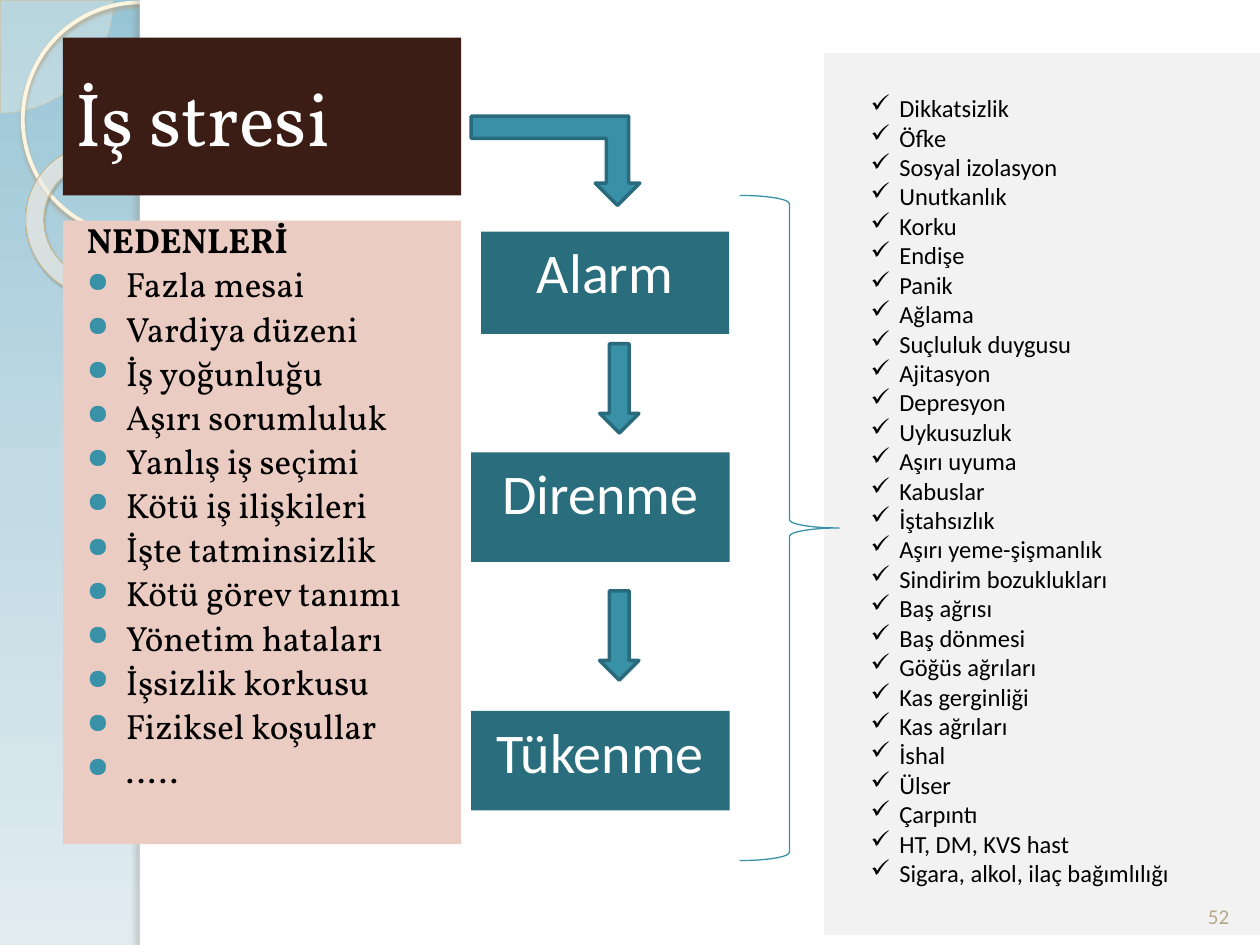
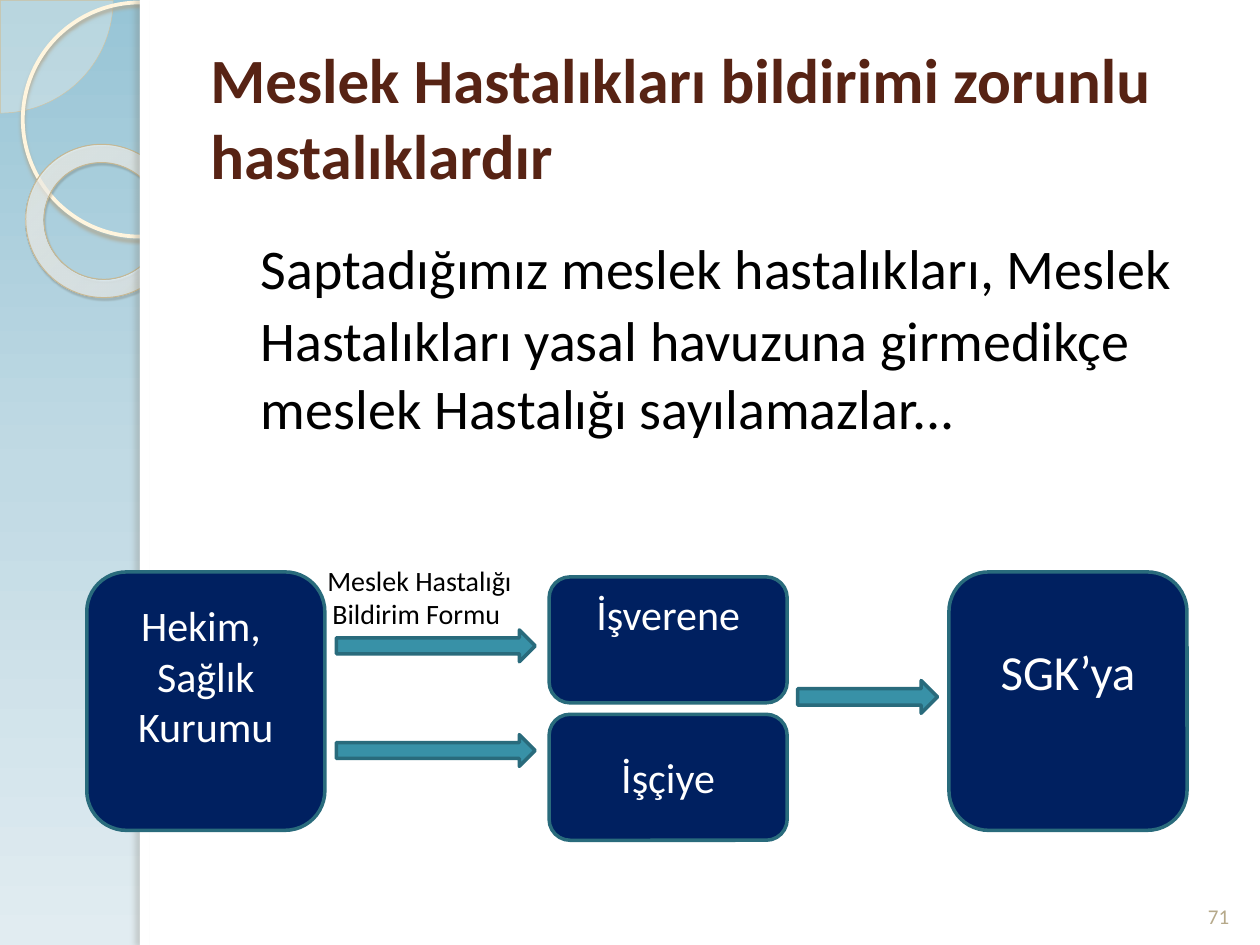
from lxml.etree import SubElement
from pptx import Presentation
from pptx.dml.color import RGBColor
from pptx.enum.shapes import MSO_SHAPE
from pptx.enum.text import MSO_ANCHOR, PP_ALIGN
from pptx.oxml import parse_xml
from pptx.oxml.ns import nsdecls, qn
from pptx.util import Cm, Pt

THEME = {
    "white": "FFFFFF", "black": "000000", "teal": "3891A7", "teal_line": "296B7C",
    "stage": "2A6D7D", "navy": "002060", "brown": "3B1D15", "rust": "572314",
    "rose": "EACCC3", "grey": "F2F2F2", "number": "B6A98A",
    "pie": "FEFAF4", "pie_line": "D3C39F", "ring_line": "FFF5DE", "donut_line": "C7B893",
    "sky": [(0, "98C5D6", 100), (50, "C1DAE4", 100), (100, "E1ECF1", 100)],
    "glow": [(0, "FFFCF6", 70), (70, "FFFEFB", 55), (100, "F0D28E", 60)],
    "sans": "Calibri", "serif": "Vollkorn",
    "cover": 43, "title": 36, "lead": 32, "tab": 48, "box": 24, "goal": 28,
    "causes": 20, "form": 16, "signs": 14, "small": 12,
}


def draw(page, kind, place, fill=None, line=None, width=2, shadow=None, gradient=None):
    shape = page.shapes.add_shape(kind, *[Cm(length) for length in place])
    shape.shadow.inherit = False
    props = shape._element.spPr
    if fill:
        shape.fill.solid()
        shape.fill.fore_color.rgb = RGBColor.from_string(THEME[fill])
    else:
        shape.fill.background()
    if line:
        shape.line.color.rgb = RGBColor.from_string(THEME[line])
        shape.line.width = Pt(width)
    else:
        shape.line.fill.background()
    if gradient is not None:
        props.replace(props.find(qn("a:noFill")), gradient)
    if shadow:
        color, alpha, blur, distance, angle = shadow
        outer = SubElement(props.find(qn("a:effectLst")), qn("a:outerShdw"), blurRad=str(Pt(blur)),
                           dist=str(Pt(distance)), dir=str(angle * 60000), rotWithShape="0")
        tone = SubElement(outer, qn("a:srgbClr"), val=color)
        SubElement(tone, qn("a:alpha"), val=str(alpha * 1000))
    return shape


def write(shape, lines, size, color, face="sans", bold=False, frame=None, para_format=None,
          left=0, first=0, bullet=None, bullet_color=None, bullet_size=100):
    text = shape.text_frame
    frame_format = {"word_wrap": True, "vertical_anchor": MSO_ANCHOR.TOP} | (frame or {})
    for name, value in frame_format.items():
        setattr(text, name, value)
    for line in lines:
        para = text.add_paragraph() if text.paragraphs[0].runs else text.paragraphs[0]
        for name, value in ({"alignment": PP_ALIGN.LEFT} | (para_format or {})).items():
            setattr(para, name, value)
        props = para._p.get_or_add_pPr()
        props.set("marL", str(Cm(left)))
        props.set("indent", str(Cm(first)))
        if bullet:
            tone = SubElement(props, qn("a:buClr"))
            SubElement(tone, qn("a:srgbClr"), val=THEME[bullet_color])
            SubElement(props, qn("a:buSzPct"), val=str(bullet_size * 1000))
            SubElement(props, qn("a:buChar"), char=bullet)
        for words, points in (line if isinstance(line, list) else [(line, size)]):
            span = para.add_run()
            span.text = words
            for name, value in {"name": THEME[face], "size": Pt(THEME[points]), "bold": bold}.items():
                setattr(span.font, name, value)
            span.font.color.rgb = RGBColor.from_string(THEME[color])


deck = Presentation()
deck.slide_width, deck.slide_height = Cm(25.4), Cm(19.05)
stress, report = pages = [deck.slides.add_slide(deck.slide_layouts[6]) for _ in range(2)]
CENTER = {"alignment": PP_ALIGN.CENTER}
MIDDLE = {"vertical_anchor": MSO_ANCHOR.MIDDLE}

for page in pages:
    gradients = []
    for stops, direction in (
        ("sky", '<a:lin ang="5400000" scaled="0"/>'),
        ("glow", '<a:path path="circle"><a:fillToRect l="-408000" t="-50000" r="508000" b="150000"/></a:path>'),
    ):
        marks = "".join(
            f'<a:gs pos="{at * 1000}"><a:srgbClr val="{color}"><a:alpha val="{alpha * 1000}"/></a:srgbClr></a:gs>'
            for at, color, alpha in THEME[stops])
        gradients.append(parse_xml(f'<a:gradFill {nsdecls("a")}><a:gsLst>{marks}</a:gsLst>{direction}</a:gradFill>'))
    sky, glow = gradients
    page.background.fill.gradient()
    old_sky = page._element.find(".//" + qn("a:gradFill"))
    old_sky.getparent().replace(old_sky, sky)

    pie = draw(page, MSO_SHAPE.PIE, (-2.26, -2.26, 4.54, 4.54), "pie", "pie_line", 0.25)
    pie.adjustments[0], pie.adjustments[1] = 0, 54
    SubElement(pie._element.spPr.find(".//" + qn("a:srgbClr")), qn("a:alpha"), val="33000")
    draw(page, MSO_SHAPE.OVAL, (0.46, 0.05, 4.72, 4.72), None, "ring_line", 2.15, ("B0A68F", 85, 2, 2, 90))
    donut = draw(page, MSO_SHAPE.DONUT, (0.51, 2.92, 3.12, 3.07), None, "donut_line", 0.58,
                 ("5A5444", 35, 1, 1.2, 75), glow)
    donut.rotation = 38.6
    donut.adjustments[0] = 0.12
    draw(page, MSO_SHAPE.RECTANGLE, (2.82, 0, 22.58, 19.05), "white")
    draw(page, MSO_SHAPE.RECTANGLE, (2.82, 0, 0.2, 19.05), "white", shadow=("736F63", 25, 3, 3, 180))

title = draw(stress, MSO_SHAPE.RECTANGLE, (1.27, 0.76, 8.03, 3.18), "brown")
write(title, ["İş stresi"], "cover", "white", "serif", frame=MIDDLE)

causes = draw(stress, MSO_SHAPE.RECTANGLE, (1.27, 4.45, 8.03, 12.57), "rose")
cause_format = {"face": "serif", "left": 1.02, "first": -0.79,
                "para_format": {"line_spacing": 0.8, "space_before": Pt(6)}}
write(causes, ["NEDENLERİ"], "causes", "black", bold=True, **cause_format)
write(causes, [
    "Fazla mesai", "Vardiya düzeni", "İş yoğunluğu", "Aşırı sorumluluk", "Yanlış iş seçimi",
    "Kötü iş ilişkileri", "İşte tatminsizlik", "Kötü görev tanımı", "Yönetim hataları",
    "İşsizlik korkusu", "Fiziksel koşullar", "…..",
], "causes", "black", bullet="●", bullet_color="teal", bullet_size=80, **cause_format)

signs = draw(stress, MSO_SHAPE.RECTANGLE, (16.61, 1.07, 8.79, 17.78), "grey")
write(signs, [
    "Dikkatsizlik", "Öfke", "Sosyal izolasyon", "Unutkanlık", "Korku", "Endişe", "Panik", "Ağlama",
    "Suçluluk duygusu", "Ajitasyon", "Depresyon", "Uykusuzluk", "Aşırı uyuma", "Kabuslar",
    "İştahsızlık", "Aşırı yeme-şişmanlık", "Sindirim bozuklukları", "Baş ağrısı", "Baş dönmesi",
    "Göğüs ağrıları", "Kas gerginliği", "Kas ağrıları", "İshal", "Ülser", "Çarpıntı",
    "HT, DM, KVS hast", "Sigara, alkol, ilaç bağımlılığı",
], "signs", "black", frame={"margin_top": Cm(0.81)}, left=1.27, first=-0.58,
    bullet="✓", bullet_color="black")

for name, place in (
    ("Alarm", (9.7, 4.67, 5, 2.06)),
    ("Direnme", (9.5, 9.12, 5.21, 2.21)),
    ("Tükenme", (9.5, 14.33, 5.21, 2.01)),
):
    stage = draw(stress, MSO_SHAPE.RECTANGLE, place, "stage")
    write(stage, [name], "lead", "white", para_format=CENTER | {"space_before": Pt(2)})

bent = draw(stress, MSO_SHAPE.BENT_UP_ARROW, (9.5, 2.34, 3.4, 1.8), "teal", "teal_line")
bent.rotation = 180
bent._element.spPr.xfrm.set("flipH", "1")
for top in (6.93, 11.91):
    draw(stress, MSO_SHAPE.DOWN_ARROW, (12.09, top, 0.79, 1.8), "teal", "teal_line")
draw(stress, MSO_SHAPE.RIGHT_BRACE, (14.91, 3.94, 2.01, 13.41), None, "teal", 0.75)

title = report.shapes.add_textbox(Cm(3.99), Cm(0.76), Cm(20.83), Cm(3.18))
write(title, ["Meslek Hastalıkları bildirimi zorunlu hastalıklardır"], "title", "rust", bold=True, frame=MIDDLE)
body = report.shapes.add_textbox(Cm(3.99), Cm(4.01), Cm(20.83), Cm(13.34))
write(body, [[("\t", "tab"), (
    "Saptadığımız meslek hastalıkları, Meslek Hastalıkları yasal havuzuna girmedikçe "
    "meslek Hastalığı sayılamazlar...", "lead")]],
    "lead", "black", para_format={"space_before": Pt(6)}, left=1.02, first=-0.79)

for lines, place, size, bottom in (
    (["Hekim, ", "Sağlık Kurumu"], (1.75, 11.53, 4.8, 5.21), "box", 1.16),
    (["SGK’ya"], (19.13, 11.53, 4.8, 5.21), "goal", 1.33),
    (["İşverene"], (11.07, 11.63, 4.8, 2.54), "box", 1.16),
    (["İşçiye"], (11.07, 14.4, 4.8, 2.54), "box", 0.13),
):
    party = draw(report, MSO_SHAPE.ROUNDED_RECTANGLE, place, "navy", "teal_line")
    write(party, lines, size, "white", frame=MIDDLE | {"margin_bottom": Cm(bottom)}, para_format=CENTER)

for place in ((6.78, 12.7, 4.01, 0.64), (6.78, 14.81, 4.01, 0.64), (16.08, 13.72, 2.82, 0.66)):
    draw(report, MSO_SHAPE.RIGHT_ARROW, place, "teal", "teal_line")

form = report.shapes.add_textbox(Cm(6.35), Cm(11.23), Cm(4.45), Cm(1.63))
write(form, ["Meslek Hastalığı"], "form", "black", frame={"word_wrap": False})
write(form, ["Bildirim Formu "], "form", "black", frame={"word_wrap": False}, para_format=CENTER)

for page, number in zip(pages, ("52", "71")):
    box = page.shapes.add_textbox(Cm(23.93), Cm(17.53), Cm(1.27), Cm(1.32))
    write(box, [number], "small", "number", frame={"vertical_anchor": MSO_ANCHOR.BOTTOM}, para_format=CENTER)

deck.save("out.pptx")
